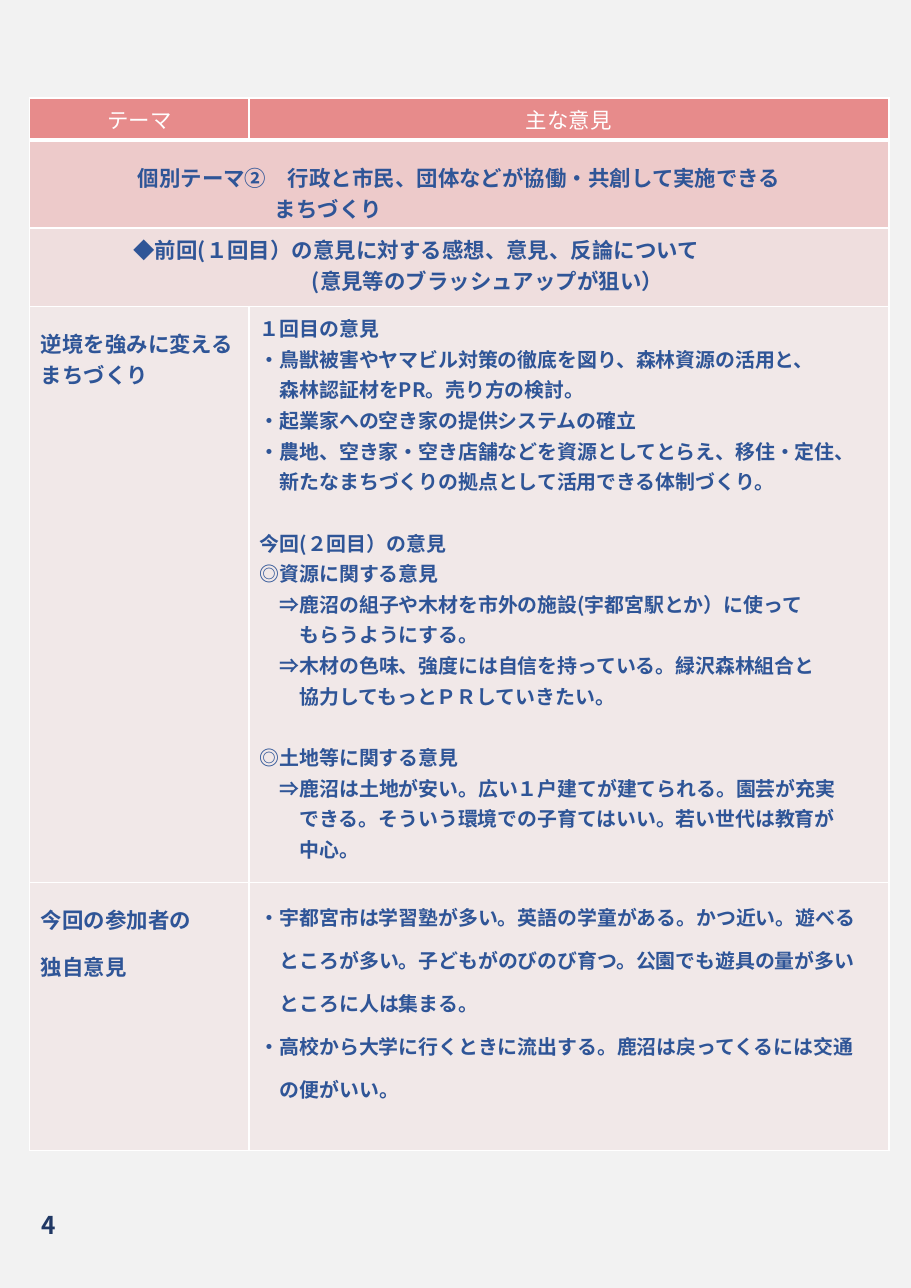
import pptx
import pptx.util
import pptx.dml.color
import pptx.enum.text
import pptx.oxml
import pptx.oxml.ns
import lxml.etree

Pt = pptx.util.Pt
Inch = pptx.util.Inches
RGB = pptx.dml.color.RGBColor.from_string
qn = pptx.oxml.ns.qn
MID = pptx.enum.text.PP_ALIGN.CENTER
LEFT = pptx.enum.text.PP_ALIGN.LEFT

theme = {
    "font": "Noto Sans CJK JP",
    "back": "F2F2F2",
    "rose": "E78B8B",
    "white": "FFFFFF",
    "blue": "2F5597",
    "navy": "203864",
    "page": 16,
    "head": 14,
    "body": 13,
}


def write(frame, lines, size=theme["head"], color=theme["blue"], bold=True,
          align=LEFT, gap=None):
    for num, line in enumerate(lines):
        text, look = line if isinstance(line, tuple) else (line, {})
        para = frame.paragraphs[0] if num == 0 else frame.add_paragraph()
        para.alignment = look.get("align", align)
        para.line_spacing = look.get("gap", gap)
        if "above" in look:
            para.space_before = Pt(look["above"])
        props = para._p.get_or_add_pPr()
        for side in ("marL", "marR"):
            props.set(side, str(Pt(look.get(side, 0))))
        props.set("indent", "0")
        run = para.add_run()
        run.text = text
        font = run.font
        font.name, font.size, font.bold = theme["font"], Pt(size), bold
        font.color.rgb = RGB(color)
        east = lxml.etree.SubElement(font._element, qn("a:ea"))
        east.set("typeface", theme["font"])


def paint(cell, alpha, base):
    props = cell._tc.get_or_add_tcPr()
    for side in "LRTB":
        width = base if side == "B" else 1
        edge = lxml.etree.SubElement(props, qn("a:ln" + side), w=str(Pt(width)))
        solid = lxml.etree.SubElement(edge, qn("a:solidFill"))
        lxml.etree.SubElement(solid, qn("a:srgbClr"), val=theme["white"])
    cell.fill.solid()
    cell.fill.fore_color.rgb = RGB(theme["rose"])
    if alpha < 100:
        tone = props.find(qn("a:solidFill")).find(qn("a:srgbClr"))
        lxml.etree.SubElement(tone, qn("a:alpha"), val=str(alpha * 1000))


deck = pptx.Presentation()
deck.slide_width, deck.slide_height = Inch(8.27), Inch(11.69)
slide = deck.slides.add_slide(deck.slide_layouts[6])
slide.background.fill.solid()
slide.background.fill.fore_color.rgb = RGB(theme["back"])

page = slide.shapes.add_textbox(Inch(0.28), Inch(10.81), Inch(0.87), Inch(0.62))
page.text_frame.word_wrap = True
page.text_frame.vertical_anchor = pptx.enum.text.MSO_ANCHOR.MIDDLE
write(page.text_frame, ["4"], size=theme["page"], color=theme["navy"])

cols = [1.99, 5.81]
rows = [0.38, 0.8, 0.71, 5.23, 2.43]
tints = [100, 38, 19, 9, 9]
grid = slide.shapes.add_table(len(rows), len(cols), Inch(0.27), Inch(0.89),
                              Inch(sum(cols)), Inch(sum(rows))).table
grid.first_row = grid.horz_banding = False
for col, width in zip(grid.columns, cols):
    col.width = Inch(width)
for num, (row, height) in enumerate(zip(grid.rows, rows)):
    row.height = Inch(height)
    for cell in row.cells:
        paint(cell, tints[num], 3 if num == 0 else 1)
for num in (1, 2):
    grid.cell(num, 0).merge(grid.cell(num, 1))

one = {"marL": theme["body"]}
two = {"marL": 2 * theme["body"]}
part = {"above": 20}

for num, name in enumerate(["テーマ", "主な意見"]):
    write(grid.cell(0, num).text_frame, [name], color=theme["white"],
          bold=False, align=MID)

write(grid.cell(1, 0).text_frame, [
    ("個別テーマ②　行政と市民、団体などが協働・共創して実施できる",
     {"align": MID, "gap": 1.5}),
    ("まちづくり", {"marL": 153}),
])
write(grid.cell(2, 0).text_frame, [
    ("◆前回(１回目）の意見に対する感想、意見、反論について", {"marR": 56}),
    ("(意見等のブラッシュアップが狙い）", {"marL": 37}),
], align=MID)
write(grid.cell(3, 0).text_frame, [
    ("逆境を強みに変える", {"gap": 1.5}),
    "まちづくり",
])
write(grid.cell(3, 1).text_frame, [
    "１回目の意見",
    "・鳥獣被害やヤマビル対策の徹底を図り、森林資源の活用と、",
    ("森林認証材をPR。売り方の検討。", one),
    "・起業家への空き家の提供システムの確立",
    "・農地、空き家・空き店舗などを資源としてとらえ、移住・定住、",
    ("新たなまちづくりの拠点として活用できる体制づくり。", one),
    ("今回(２回目）の意見", part),
    "◎資源に関する意見",
    ("⇒鹿沼の組子や木材を市外の施設(宇都宮駅とか）に使って", one),
    ("もらうようにする。", two),
    ("⇒木材の色味、強度には自信を持っている。緑沢森林組合と", one),
    ("協力してもっとＰＲしていきたい。", two),
    ("◎土地等に関する意見", part),
    ("⇒鹿沼は土地が安い。広い１戸建てが建てられる。園芸が充実", one),
    ("できる。そういう環境での子育てはいい。若い世代は教育が", two),
    ("中心。", two),
], size=theme["body"], gap=Pt(20))
write(grid.cell(4, 0).text_frame, ["今回の参加者の", "独自意見"], gap=1.5)
write(grid.cell(4, 1).text_frame, [
    "・宇都宮市は学習塾が多い。英語の学童がある。かつ近い。遊べる",
    ("ところが多い。子どもがのびのび育つ。公園でも遊具の量が多い", one),
    ("ところに人は集まる。", one),
    "・高校から大学に行くときに流出する。鹿沼は戻ってくるには交通",
    ("の便がいい。", one),
], size=theme["body"], gap=1.5)

deck.save("out.pptx")
